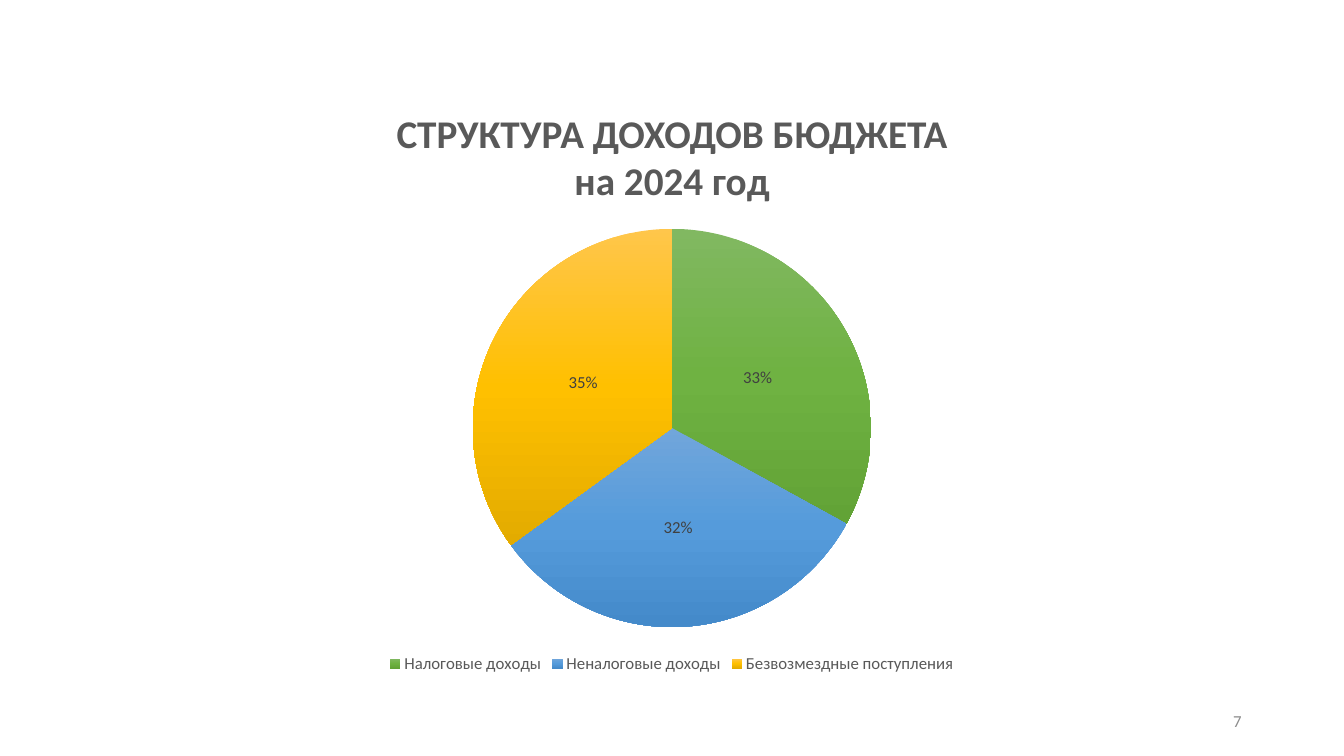
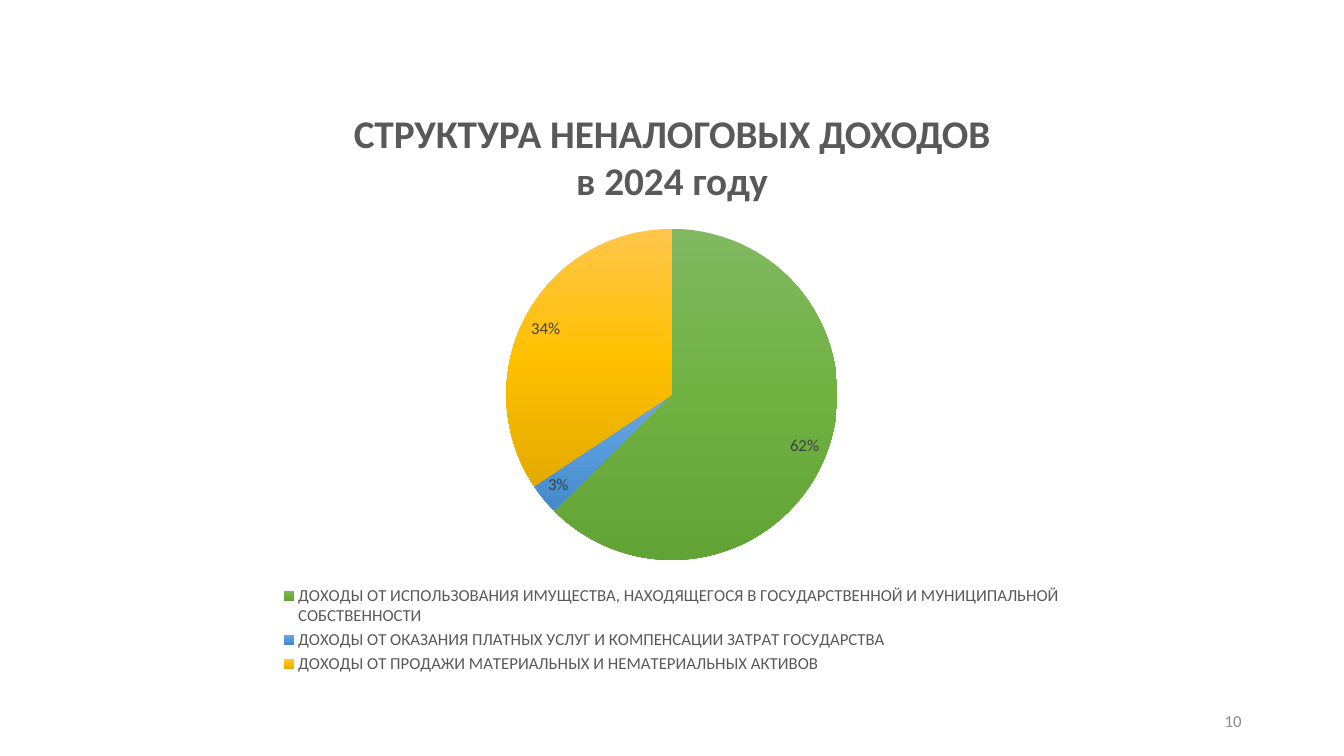
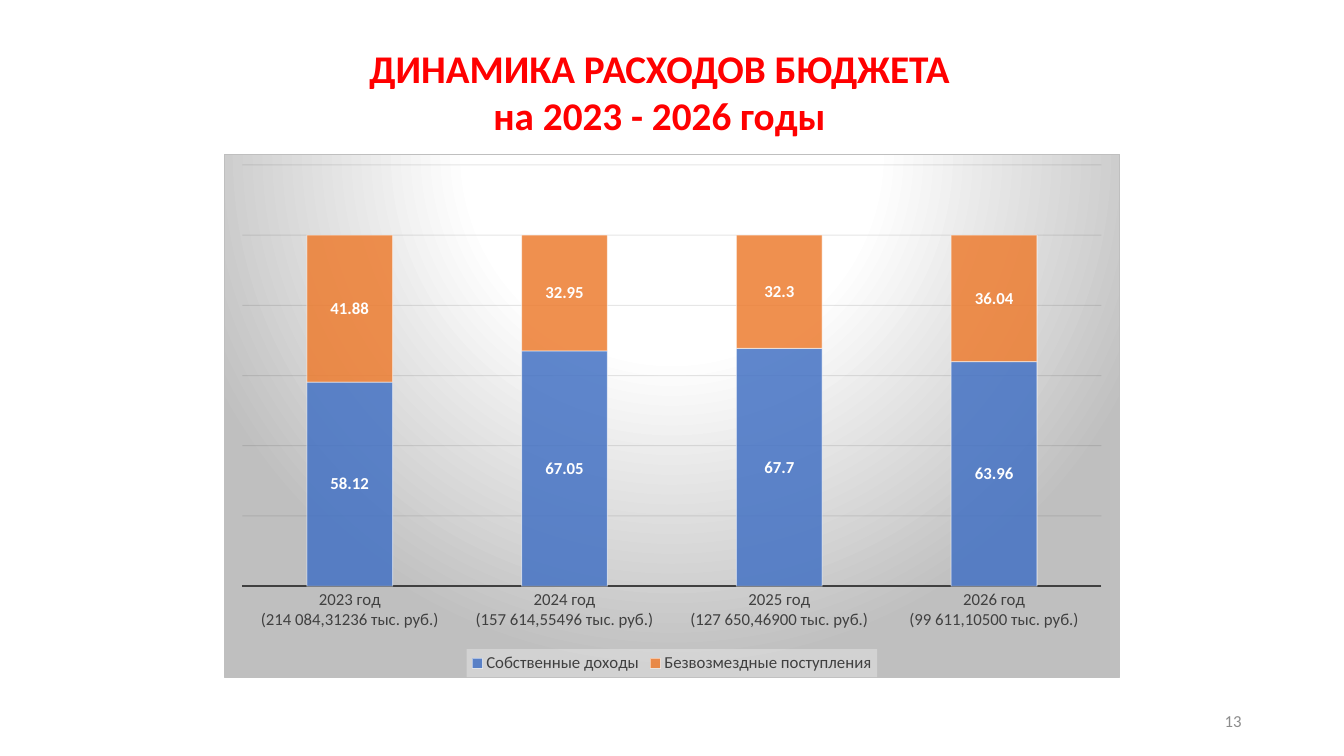
import pptx
import pptx.chart.data
import pptx.dml.color
import pptx.enum.chart
import pptx.enum.text
import pptx.oxml
import pptx.oxml.ns
import pptx.util

Pt = pptx.util.Pt
XL = pptx.enum.chart
ALIGN = pptx.enum.text.PP_ALIGN
MIDDLE = pptx.enum.text.MSO_ANCHOR.MIDDLE
NS = pptx.oxml.ns.nsdecls("c", "a")

FONT = "Calibri"
GREY, DARK, WHITE = "595959", "404040", "FFFFFF"
CHART_LEFT, CHART_WIDTH, CHART_BOTTOM = 160, 640, 484
PIE_TOP = 163.5

SLICE_GRADIENTS = [
    [(0, "81B861"), (50, "6FB242"), (100, "62A336")],
    [(0, "71A6DB"), (50, "559BDB"), (100, "448ACA")],
    [(0, "FFC64B"), (50, "FFC000"), (100, "E3AB00")],
]
DOWNWARD = '<a:lin ang="5400000" scaled="0"/>'
FROM_TOP = ('<a:path path="circle">'
            '<a:fillToRect l="50000" t="-80000" r="50000" b="180000"/></a:path>')

SLIDES = [
    dict(number=7, title="СТРУКТУРА ДОХОДОВ БЮДЖЕТА\nна 2024 год",
         title_at=(160, 74), title_color=GREY, chart_top=57,
         categories=["Налоговые доходы", "Неналоговые доходы",
                     "Безвозмездные поступления"],
         series={"Доходы": [33, 32, 35]},
         diameter=284.5, labels_at=XL.XL_LABEL_POSITION.CENTER),
    dict(number=10, title="СТРУКТУРА НЕНАЛОГОВЫХ ДОХОДОВ\nв 2024 году",
         title_at=(160, 74), title_color=GREY, chart_top=57,
         categories=["ДОХОДЫ ОТ ИСПОЛЬЗОВАНИЯ ИМУЩЕСТВА, НАХОДЯЩЕГОСЯ В "
                     "ГОСУДАРСТВЕННОЙ И МУНИЦИПАЛЬНОЙ СОБСТВЕННОСТИ",
                     "ДОХОДЫ ОТ ОКАЗАНИЯ ПЛАТНЫХ УСЛУГ И КОМПЕНСАЦИИ "
                     "ЗАТРАТ ГОСУДАРСТВА",
                     "ДОХОДЫ ОТ ПРОДАЖИ МАТЕРИАЛЬНЫХ И НЕМАТЕРИАЛЬНЫХ АКТИВОВ"],
         series={"Неналоговые доходы": [62, 3, 34]},
         diameter=236.5, labels_at=XL.XL_LABEL_POSITION.INSIDE_END),
    dict(number=13, title="ДИНАМИКА РАСХОДОВ БЮДЖЕТА\nна 2023 - 2026 годы",
         title_at=(151, 27.5), title_color="FF0000", chart_top=110,
         categories=["2023 год\n(214 084,31236 тыс. руб.)",
                     "2024 год\n(157 614,55496 тыс. руб.)",
                     "2025 год\n(127 650,46900 тыс. руб.)",
                     "2026 год\n(99 611,10500 тыс. руб.)"],
         series={"Собственные доходы": [58.12, 67.05, 67.7, 63.96],
                 "Безвозмездные поступления": [41.88, 32.95, 32.3, 36.04]},
         diameter=None, labels_at=XL.XL_LABEL_POSITION.CENTER),
]


def style(font, size, color, bold=False):
    font.name, font.size, font.bold = FONT, Pt(size), bold
    font.color.rgb = pptx.dml.color.RGBColor.from_string(color)


def gradient(stops, direction):
    """Return the XML of a gradient fill; stops are (percent, hex) pairs."""
    marks = "".join(f'<a:gs pos="{at * 1000}"><a:srgbClr val="{color}"/></a:gs>'
                    for at, color in stops)
    return f'<a:gradFill {NS}><a:gsLst>{marks}</a:gsLst>{direction}</a:gradFill>'


deck = pptx.Presentation()
deck.slide_width, deck.slide_height = Pt(960), Pt(540)

for content in SLIDES:
    slide = deck.slides.add_slide(deck.slide_layouts[5])
    is_pie = content["diameter"] is not None

    # Title
    title = slide.shapes.title
    title.left, title.top = map(Pt, content["title_at"])
    title.width, title.height = Pt(640), Pt(75)
    heading = title.text_frame
    heading.text = content["title"]
    heading.auto_size = pptx.enum.text.MSO_AUTO_SIZE.NONE
    heading.vertical_anchor = MIDDLE
    for line in heading.paragraphs:
        line.alignment, line.line_spacing = ALIGN.CENTER, 1.0
        style(line.font, 28, content["title_color"], bold=True)

    # Chart
    data = pptx.chart.data.CategoryChartData()
    data.categories = content["categories"]
    for name, values in content["series"].items():
        data.add_series(name, values)
    chart_top = content["chart_top"]
    chart_height = CHART_BOTTOM - chart_top
    kind = XL.XL_CHART_TYPE.PIE if is_pie else XL.XL_CHART_TYPE.COLUMN_STACKED
    chart = slide.shapes.add_chart(kind, Pt(CHART_LEFT), Pt(chart_top),
                                   Pt(CHART_WIDTH), Pt(chart_height), data).chart
    chart.has_title = False
    style(chart.font, 10, "000000")
    chart.has_legend = True
    chart.legend.position = XL.XL_LEGEND_POSITION.BOTTOM
    chart.legend.include_in_layout = False
    style(chart.legend.font, 12, GREY if is_pie else DARK)

    plot = chart.plots[0]
    plot.vary_by_categories = is_pie
    plot.has_data_labels = True
    labels = plot.data_labels
    labels.show_value = True
    labels.show_percentage = False
    labels.number_format = '0"%"' if is_pie else "General"
    labels.number_format_is_linked = False
    labels.position = content["labels_at"]
    style(labels.font, 12, DARK if is_pie else WHITE, bold=not is_pie)

    chart_xml = chart._chartSpace
    if is_pie:
        diameter = content["diameter"]
        plot_box = ((1 - diameter / CHART_WIDTH) / 2,
                    (PIE_TOP - chart_top) / chart_height,
                    diameter / CHART_WIDTH, diameter / chart_height)
        backdrop = "<a:noFill/><a:ln><a:noFill/></a:ln>"
        for index in range(len(SLICE_GRADIENTS)):
            plot.series[0].points[index].format.fill.background()
        for slice_xml, stops in zip(chart_xml.xpath(".//c:dPt/c:spPr"), SLICE_GRADIENTS):
            slice_xml.replace(slice_xml[0],
                              pptx.oxml.parse_xml(gradient(stops, DOWNWARD)))
    else:
        plot_box = (0.02, 0.02, 0.96, 0.806)
        backdrop = gradient([(0, WHITE), (39, WHITE), (100, "BFBFBF")], FROM_TOP) + (
            '<a:ln w="9525"><a:solidFill><a:srgbClr val="BFBFBF"/></a:solidFill></a:ln>')
        plot.gap_width, plot.overlap = 150, 100
        for series, color in zip(plot.series, ["4472C4", "ED7D31"]):
            series.invert_if_negative = False
            series.format.fill.solid()
            series.format.fill.fore_color.rgb = pptx.dml.color.RGBColor.from_string(color)
            series.format.line.width = Pt(0.75)
            series.format.line.color.rgb = pptx.dml.color.RGBColor.from_string(WHITE)

        years = chart.category_axis
        years.major_tick_mark = XL.XL_TICK_MARK.NONE
        style(years.tick_labels.font, 12, DARK)
        years.format.line.width = Pt(1.5)
        years.format.line.color.rgb = pptx.dml.color.RGBColor.from_string(DARK)

        shares = chart.value_axis
        shares.minimum_scale, shares.maximum_scale, shares.major_unit = 0, 120, 20
        shares.has_major_gridlines = True
        grid = shares.major_gridlines.format.line
        grid.width = Pt(0.75)
        grid.color.rgb = pptx.dml.color.RGBColor.from_string("0D0D0D")
        shares.visible = False

        chart_xml.xpath(".//c:legend/c:overlay")[0].addnext(pptx.oxml.parse_xml(
            f'<c:spPr {NS}><a:solidFill><a:srgbClr val="F2F2F2"/></a:solidFill></c:spPr>'))
        for place, opacity in [(".//c:ser/c:spPr/a:solidFill/a:srgbClr", 85),
                               (".//c:ser/c:spPr/a:ln//a:srgbClr", 50),
                               (".//c:majorGridlines//a:srgbClr", 10),
                               (".//c:legend/c:spPr//a:srgbClr", 39)]:
            for color_xml in chart_xml.xpath(place):
                color_xml.append(pptx.oxml.parse_xml(
                    f'<a:alpha {NS} val="{opacity * 1000}"/>'))

    chart_xml.xpath("c:chart")[0].addnext(
        pptx.oxml.parse_xml(f"<c:spPr {NS}>{backdrop}</c:spPr>"))

    plot_area = chart_xml.xpath("c:chart/c:plotArea")[0]
    for automatic in plot_area.xpath("c:layout"):
        plot_area.remove(automatic)
    sizes = "".join(f'<c:{side} val="{share:.4f}"/>' for side, share in zip("xywh", plot_box))
    plot_area.insert(0, pptx.oxml.parse_xml(
        f'<c:layout {NS}><c:manualLayout><c:layoutTarget val="inner"/>'
        f'<c:xMode val="edge"/><c:yMode val="edge"/>{sizes}</c:manualLayout></c:layout>'))

    # Slide number
    footer = slide.shapes.add_textbox(Pt(678), Pt(500.5), Pt(216), Pt(28.75)).text_frame
    footer.word_wrap = True
    footer.vertical_anchor = MIDDLE
    footer.text = str(content["number"])
    footer.paragraphs[0].alignment = ALIGN.RIGHT
    style(footer.paragraphs[0].font, 12, "8C8C8C")

deck.save("out.pptx")
